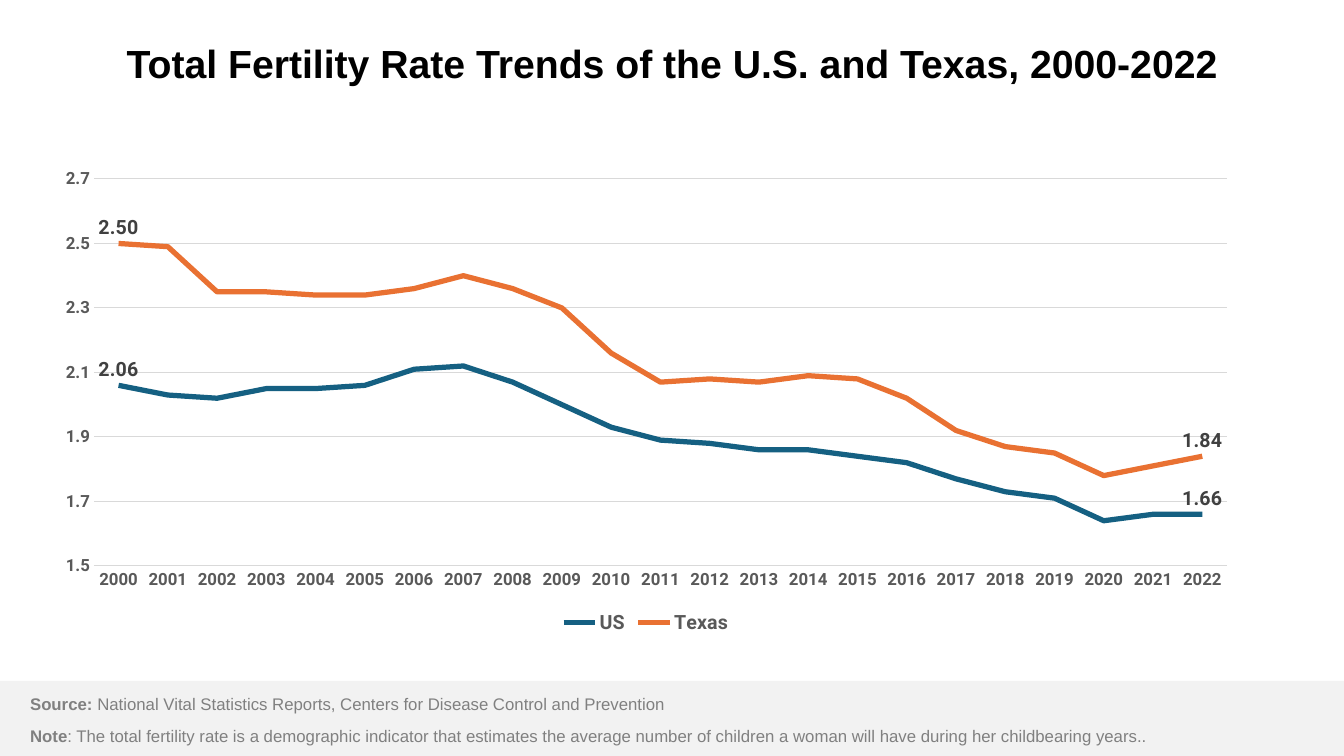
import pptx
import pptx.chart.data
import pptx.dml.color
import pptx.enum.chart
import pptx.enum.shapes
import pptx.enum.text
import pptx.oxml
import pptx.oxml.ns
import pptx.util

TITLE = "Total Fertility Rate Trends of the U.S. and Texas, 2000-2022"
FOOTNOTES = [
    ("Source: ", "National Vital Statistics Reports, Centers for Disease Control and Prevention"),
    ("Note", ": The total fertility rate is a demographic indicator that estimates the average "
             "number of children a woman will have during her childbearing years.."),
]
YEARS = [str(year) for year in range(2000, 2023)]
SERIES = [
    ("US", "156082", [2.06, 2.03, 2.02, 2.05, 2.05, 2.06, 2.11, 2.12, 2.07, 2.00, 1.93, 1.89,
                      1.88, 1.86, 1.86, 1.84, 1.82, 1.77, 1.73, 1.71, 1.64, 1.66, 1.66]),
    ("Texas", "E97132", [2.50, 2.49, 2.35, 2.35, 2.34, 2.34, 2.36, 2.40, 2.36, 2.30, 2.16, 2.07,
                         2.08, 2.07, 2.09, 2.08, 2.02, 1.92, 1.87, 1.85, 1.78, 1.81, 1.84]),
]

# left, top, width, height in px
SLIDE_WIDTH, SLIDE_HEIGHT = 1344, 756
TITLE_BOX = (0, 11, SLIDE_WIDTH, 110)
BAND_BOX = (0, 681, SLIDE_WIDTH, 75)
FOOTNOTE_BOX = (20, 701, 1139, 40)
CHART_BOX = (41, 159, 1210, 480)
PLOT_BOX = (94, 179, 1133, 387)

GRID_COLOR, AXIS_COLOR, LABEL_COLOR = "D9D9D9", "595959", "404040"


def px(length):
    return pptx.util.Emu(round(length * 914400 / 100.8))


def rgb(color):
    return pptx.dml.color.RGBColor.from_string(color)


def place(shape, box):
    shape.left, shape.top, shape.width, shape.height = map(px, box)


def format_font(font, size, color, name, bold=True):
    font.size = pptx.util.Pt(size)
    font.color.rgb = rgb(color)
    font.name = name
    font.bold = bold


def add_text(paragraph, text, size, color, bold=True):
    run = paragraph.add_run()
    run.text = text
    format_font(run.font, size, color, "Arial", bold)


def prepare_frame(shape):
    frame = shape.text_frame
    frame.word_wrap = True
    frame.auto_size = pptx.enum.text.MSO_AUTO_SIZE.NONE
    frame.vertical_anchor = pptx.enum.text.MSO_ANCHOR.MIDDLE
    return frame


def add_band(slide):
    """Draw the grey footer band behind everything else."""
    band = slide.shapes.add_shape(pptx.enum.shapes.MSO_SHAPE.RECTANGLE, *map(px, BAND_BOX))
    band.shadow.inherit = False
    band.fill.solid()
    band.fill.fore_color.rgb = rgb("F2F2F2")
    band.line.fill.background()
    slide.shapes._spTree.insert(2, band._element)


def fill_title(shape):
    place(shape, TITLE_BOX)
    paragraph = prepare_frame(shape).paragraphs[0]
    paragraph.alignment = pptx.enum.text.PP_ALIGN.CENTER
    paragraph.line_spacing = 0.9
    add_text(paragraph, TITLE, size=28, color="000000")


def fill_footnotes(shape):
    place(shape, FOOTNOTE_BOX)
    frame = prepare_frame(shape)
    for index, (lead, rest) in enumerate(FOOTNOTES):
        paragraph = frame.add_paragraph() if index else frame.paragraphs[0]
        properties = paragraph._p.get_or_add_pPr()
        properties.set("marL", "0")
        properties.set("indent", "0")
        properties.append(pptx.oxml.parse_xml(f"<a:buNone {pptx.oxml.ns.nsdecls('a')}/>"))
        paragraph.line_spacing = 0.9
        paragraph.space_before = pptx.util.Pt(10 if index else 0)
        add_text(paragraph, lead, size=12, color="808080")
        add_text(paragraph, rest, size=12, color="808080", bold=False)


def format_line(line, color, width):
    line.color.rgb = rgb(color)
    line.width = pptx.util.Pt(width)


def format_axes(chart):
    for axis in (chart.category_axis, chart.value_axis):
        axis.major_tick_mark = pptx.enum.chart.XL_TICK_MARK.NONE
        axis.minor_tick_mark = pptx.enum.chart.XL_TICK_MARK.NONE
        format_font(axis.tick_labels.font, 12, AXIS_COLOR, "Roboto")
    format_line(chart.category_axis.format.line, GRID_COLOR, 0.75)
    values = chart.value_axis
    values.minimum_scale, values.maximum_scale, values.major_unit = 1.5, 2.7, 0.2
    values.tick_labels.number_format = "0.0"
    values.tick_labels.number_format_is_linked = False
    values.format.line.fill.background()
    format_line(values.major_gridlines.format.line, GRID_COLOR, 0.75)


def fix_plot_area(chart):
    """Pin the inner plot area to PLOT_BOX, as fractions of the chart."""
    left, top, width, height = CHART_BOX
    plot_left, plot_top, plot_width, plot_height = PLOT_BOX
    fractions = {"x": (plot_left - left) / width, "y": (plot_top - top) / height,
                 "w": plot_width / width, "h": plot_height / height}
    modes = '<c:layoutTarget val="inner"/><c:xMode val="edge"/><c:yMode val="edge"/>'
    sizes = "".join(f'<c:{key} val="{value:.4f}"/>' for key, value in fractions.items())
    layout = pptx.oxml.parse_xml(
        f"<c:layout {pptx.oxml.ns.nsdecls('c')}><c:manualLayout>{modes}{sizes}"
        "</c:manualLayout></c:layout>")
    plot_area = chart._chartSpace.chart.plotArea
    for old_layout in plot_area.findall(pptx.oxml.ns.qn("c:layout")):
        plot_area.remove(old_layout)
    plot_area.insert(0, layout)


def add_fertility_chart(slide):
    data = pptx.chart.data.CategoryChartData(number_format="0.00")
    data.categories = YEARS
    for name, _, rates in SERIES:
        data.add_series(name, rates)
    chart = slide.shapes.add_chart(
        pptx.enum.chart.XL_CHART_TYPE.LINE, *map(px, CHART_BOX), data).chart
    format_font(chart.font, 14, "000000", "Roboto")
    chart.has_title = False
    chart.has_legend = True
    chart.legend.position = pptx.enum.chart.XL_LEGEND_POSITION.BOTTOM
    chart.legend.include_in_layout = False
    format_font(chart.legend.font, 14, AXIS_COLOR, "Roboto")
    format_axes(chart)
    fix_plot_area(chart)
    chart.plots[0].vary_by_categories = False
    for series, (_, color, rates) in zip(chart.plots[0].series, SERIES):
        series.smooth = False
        series.marker.style = pptx.enum.chart.XL_MARKER_STYLE.NONE
        format_line(series.format.line, color, 3.75)
        series.data_labels.show_value = False
        for index in (0, len(rates) - 1):
            label = series.points[index].data_label
            format_font(label.font, 14, LABEL_COLOR, "Roboto")
            label.position = pptx.enum.chart.XL_LABEL_POSITION.ABOVE


def main():
    presentation = pptx.Presentation()
    presentation.slide_width, presentation.slide_height = px(SLIDE_WIDTH), px(SLIDE_HEIGHT)
    slide = presentation.slides.add_slide(presentation.slide_layouts[1])
    add_band(slide)
    fill_title(slide.shapes.title)
    fill_footnotes(slide.placeholders[1])
    add_fertility_chart(slide)
    presentation.save("out.pptx")


if __name__ == "__main__":
    main()
